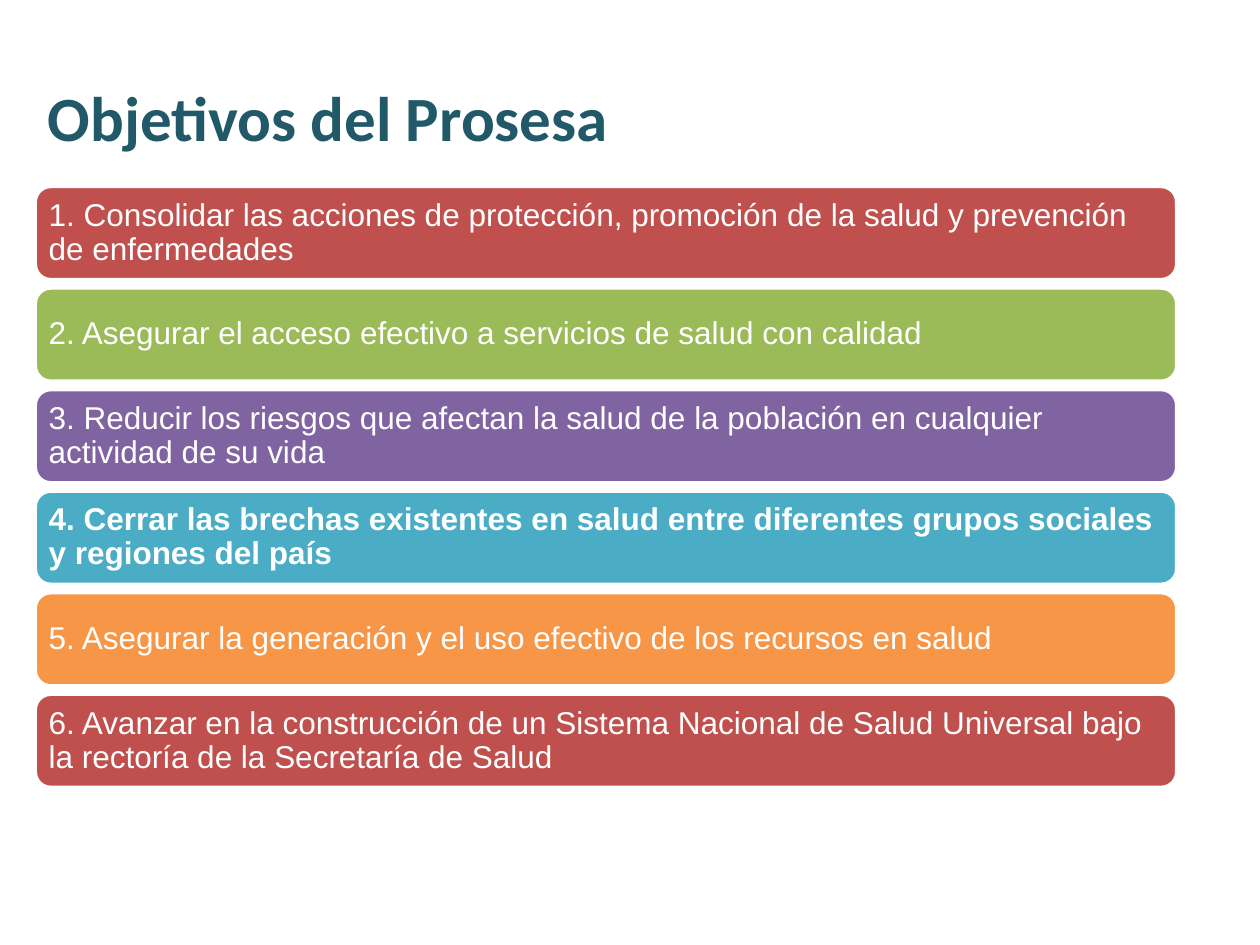
from pptx import Presentation
from pptx.dml.color import RGBColor
from pptx.enum.shapes import MSO_SHAPE
from pptx.enum.text import MSO_ANCHOR, PP_ALIGN
from pptx.util import Inches, Pt

ROUNDED = MSO_SHAPE.ROUNDED_RECTANGLE
MIDDLE = MSO_ANCHOR.MIDDLE
LEFT = PP_ALIGN.LEFT

# Content: text and whether it is emphasised
TITLE = "Objetivos del Prosesa"
OBJECTIVES = [
    ("Consolidar las acciones de protección, promoción de la salud y prevención de enfermedades", False),
    ("Asegurar el acceso efectivo a servicios de salud con calidad", False),
    ("Reducir los riesgos que afectan la salud de la población en cualquier actividad de su vida", False),
    ("Cerrar las brechas existentes en salud entre diferentes grupos sociales y regiones del país", True),
    ("Asegurar la generación y el uso efectivo de los recursos en salud", False),
    ("Avanzar en la construcción de un Sistema Nacional de Salud Universal bajo "
     "la rectoría de la Secretaría de Salud", False),
]

THEME = {
    "title": RGBColor.from_string("215968"),
    "white": RGBColor.from_string("FFFFFF"),
    "bars": [RGBColor.from_string(c) for c in ("C0504D", "9BBB59", "8064A2", "4BACC6", "F79646")],
    "title_font": "Calibri",
    "body_font": "Arial",
    "title_size": Pt(36),
    "body_size": Pt(18),
}

# Bar layout in inches
BAR_LEFT, BAR_WIDTH, BAR_HEIGHT = 0.28, 9.06, 0.74
FIRST_TOP, LAST_TOP = 1.48, 5.51
PITCH = (LAST_TOP - FIRST_TOP) / (len(OBJECTIVES) - 1)
INSET = Inches(0.07)


def style_text(p, font_name, size, color, bold):
    p.alignment = LEFT
    font = p.runs[0].font
    font.name, font.size, font.bold = font_name, size, bold
    font.color.rgb = color


def add_bar(shapes, top, text, fill, bold):
    sp = shapes.add_shape(ROUNDED, Inches(BAR_LEFT), Inches(top), Inches(BAR_WIDTH), Inches(BAR_HEIGHT))
    sp.shadow.inherit = False
    sp.fill.solid()
    sp.fill.fore_color.rgb = fill
    sp.line.color.rgb = THEME["white"]
    sp.line.width = Pt(2)
    tf = sp.text_frame
    tf.word_wrap = True
    tf.vertical_anchor = MIDDLE
    tf.margin_left = tf.margin_right = tf.margin_top = tf.margin_bottom = INSET
    tf.text = text
    p = tf.paragraphs[0]
    p.line_spacing = 0.9
    style_text(p, THEME["body_font"], THEME["body_size"], THEME["white"], bold)


def main():
    prs = Presentation()
    prs.slide_width, prs.slide_height = Inches(10), Inches(7.5)
    s = prs.slides.add_slide(prs.slide_layouts[5])

    # Title
    title = s.shapes.title
    title.left, title.top = Inches(BAR_LEFT), Inches(0.3)
    title.width, title.height = Inches(8.98), Inches(1.25)
    tf = title.text_frame
    tf.text = TITLE
    tf.vertical_anchor = MIDDLE
    style_text(tf.paragraphs[0], THEME["title_font"], THEME["title_size"], THEME["title"], True)

    # Numbered objective bars, cycling through the accent colours
    group = s.shapes.add_group_shape()
    for i, (text, bold) in enumerate(OBJECTIVES):
        fill = THEME["bars"][i % len(THEME["bars"])]
        add_bar(group.shapes, FIRST_TOP + i * PITCH, f"{i + 1}. {text}", fill, bold)

    prs.save("out.pptx")


if __name__ == "__main__":
    main()
